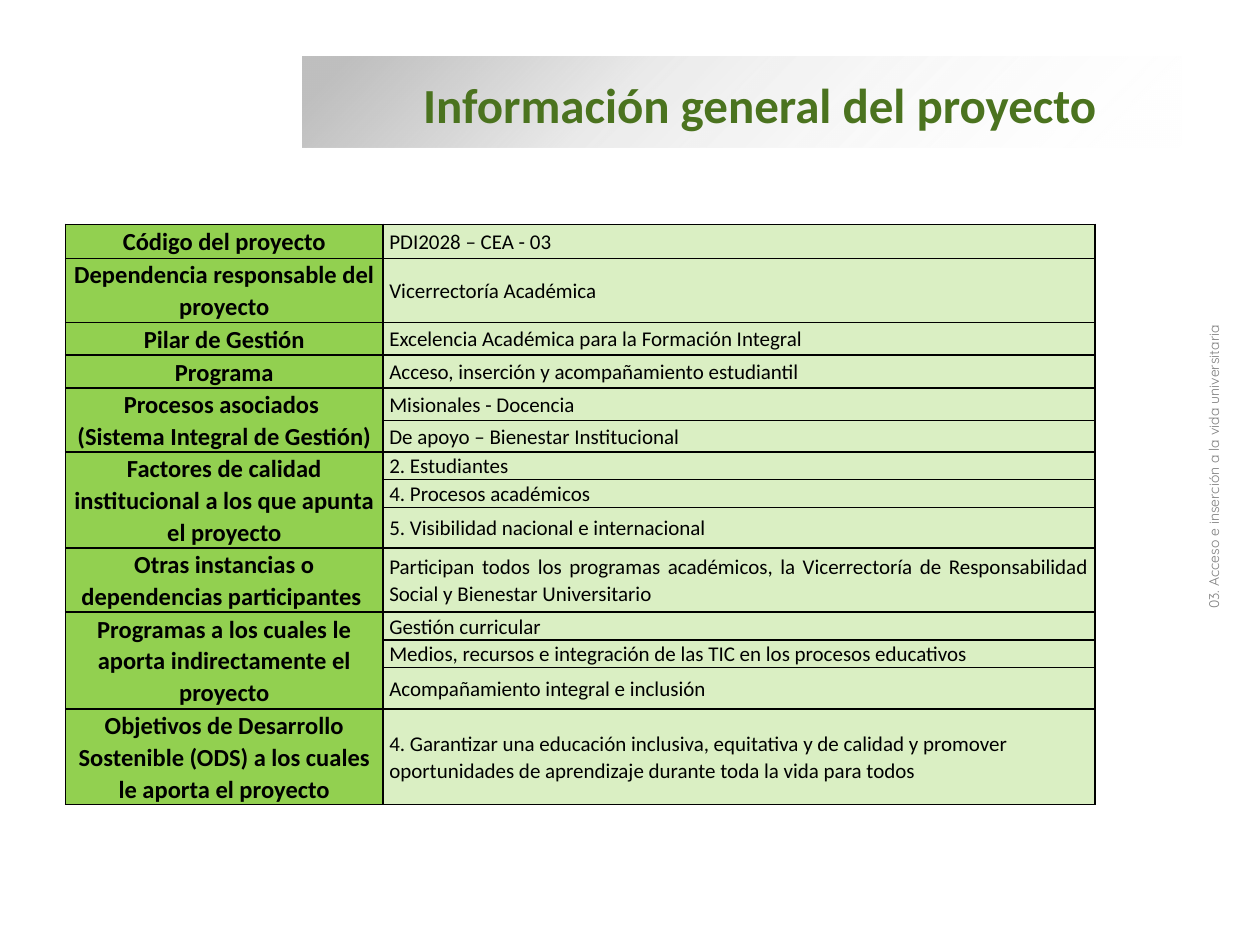
from lxml import etree
from pptx import Presentation
from pptx.dml.color import RGBColor
from pptx.enum.shapes import MSO_SHAPE
from pptx.enum.text import MSO_ANCHOR, PP_ALIGN
from pptx.util import Inches, Pt

RECT = MSO_SHAPE.RECTANGLE
MIDDLE = MSO_ANCHOR.MIDDLE
LEFT, CENTER, JUSTIFY = PP_ALIGN.LEFT, PP_ALIGN.CENTER, PP_ALIGN.JUSTIFY
NS = "http://schemas.openxmlformats.org/drawingml/2006/main"


def color(code):
    return RGBColor.from_string(code)


def style(frame, size, font, code, bold, align):
    for para in frame.paragraphs:
        para.alignment = align
        for run in para.runs:
            run.font.size = Pt(size)
            run.font.name = font
            run.font.bold = bold
            run.font.color.rgb = color(code)


deck = Presentation()
deck.slide_width, deck.slide_height = Inches(10), Inches(7.5)
slide = deck.slides.add_slide(deck.slide_layouts[6])

groups = [
    ("Código del proyecto", [("PDI2028 – CEA - 03", 0.27)]),
    ("Dependencia responsable del proyecto", [("Vicerrectoría Académica", 0.51)]),
    ("Pilar de Gestión", [("Excelencia Académica para la Formación Integral", 0.26)]),
    ("Programa", [("Acceso, inserción y acompañamiento estudiantil", 0.26)]),
    ("Procesos asociados \v(Sistema Integral de Gestión)", [
        ("Misionales - Docencia", 0.26),
        ("De apoyo – Bienestar Institucional", 0.25)]),
    ("Factores de calidad institucional a los que apunta el proyecto", [
        ("2. Estudiantes", 0.21),
        ("4. Procesos académicos", 0.22),
        ("5. Visibilidad nacional e internacional", 0.32)]),
    ("Otras instancias o dependencias participantes ", [
        ("Participan todos los programas académicos, la Vicerrectoría de "
         "Responsabilidad Social y Bienestar Universitario", 0.51)]),
    ("Programas a los cuales le aporta indirectamente el proyecto", [
        ("Gestión curricular", 0.22),
        ("Medios, recursos e integración de las TIC en los procesos educativos", 0.21),
        ("Acompañamiento integral e inclusión", 0.33)]),
    ("Objetivos de Desarrollo Sostenible (ODS) a los cuales le aporta el proyecto", [
        ("4. Garantizar una educación inclusiva, equitativa y de calidad y promover "
         "oportunidades de aprendizaje durante toda la vida para todos", 0.76)]),
]
count = sum(len(items) for _, items in groups)
table = slide.shapes.add_table(
    count, 2, Inches(0.52), Inches(1.78), Inches(8.17), Inches(4.59)).table
table.columns[0].width = Inches(2.52)
table.columns[1].width = Inches(5.65)

row = 0
for label, items in groups:
    table.cell(row, 0).text_frame.text = label
    if len(items) > 1:
        table.cell(row, 0).merge(table.cell(row + len(items) - 1, 0))
    for value, height in items:
        table.rows[row].height = Inches(height)
        table.cell(row, 1).text_frame.text = value
        looks = [(14, True, CENTER, "92D050", 0.04),
                 (12, False, JUSTIFY if label.startswith("Otras") else LEFT, "DAEFC3", 0.05)]
        for col, (size, bold, align, fill, inset) in enumerate(looks):
            cell = table.cell(row, col)
            cell.vertical_anchor = MIDDLE
            cell.margin_left = cell.margin_right = Inches(inset)
            cell.margin_top = cell.margin_bottom = 0
            cell.fill.solid()
            cell.fill.fore_color.rgb = color(fill)
            style(cell.text_frame, size, "Calibri", "000000", bold, align)
            cell.text_frame.paragraphs[0].line_spacing = 1.07
            props = cell._tc.get_or_add_tcPr()
            for spot, side in enumerate("LRTB"):
                props.insert(spot, etree.fromstring(
                    f'<a:ln{side} xmlns:a="{NS}" w="12700"><a:solidFill>'
                    f'<a:srgbClr val="000000"/></a:solidFill></a:ln{side}>'))
        row += 1

band = slide.shapes.add_shape(RECT, Inches(2.4), Inches(0.45), Inches(6.98), Inches(0.72))
band.shadow.inherit = False
band.line.fill.background()
band.fill.background()
stops = "".join(
    f'<a:gs pos="{place * 1000}"><a:srgbClr val="{code}">'
    f'<a:alpha val="{alpha * 1000}"/></a:srgbClr></a:gs>'
    for place, code, alpha in [(5, "BFBFBF", 100), (37, "BFBFBF", 31), (100, "FFFFFF", 0)])
blank = band._element.spPr.find(f"{{{NS}}}noFill")
blank.getparent().replace(blank, etree.fromstring(
    f'<a:gradFill xmlns:a="{NS}" rotWithShape="1"><a:gsLst>{stops}</a:gsLst>'
    '<a:lin ang="2700000" scaled="0"/></a:gradFill>'))

title = slide.shapes.add_textbox(Inches(3.26), Inches(0.54), Inches(6.2), Inches(0.57))
title.text_frame.word_wrap = True
title.text_frame.vertical_anchor = MIDDLE
title.text_frame.text = "Información general del proyecto"
style(title.text_frame, 28, "Calibri", "4B731F", True, LEFT)

side = slide.shapes.add_textbox(Inches(7.28), Inches(3.52), Inches(4.84), Inches(0.37))
side.rotation = 270
side.text_frame.word_wrap = True
side.text_frame.text = "03. Acceso e inserción a la vida universitaria"
style(side.text_frame, 8, "Quicksand", "808080", False, CENTER)

deck.save("out.pptx")
